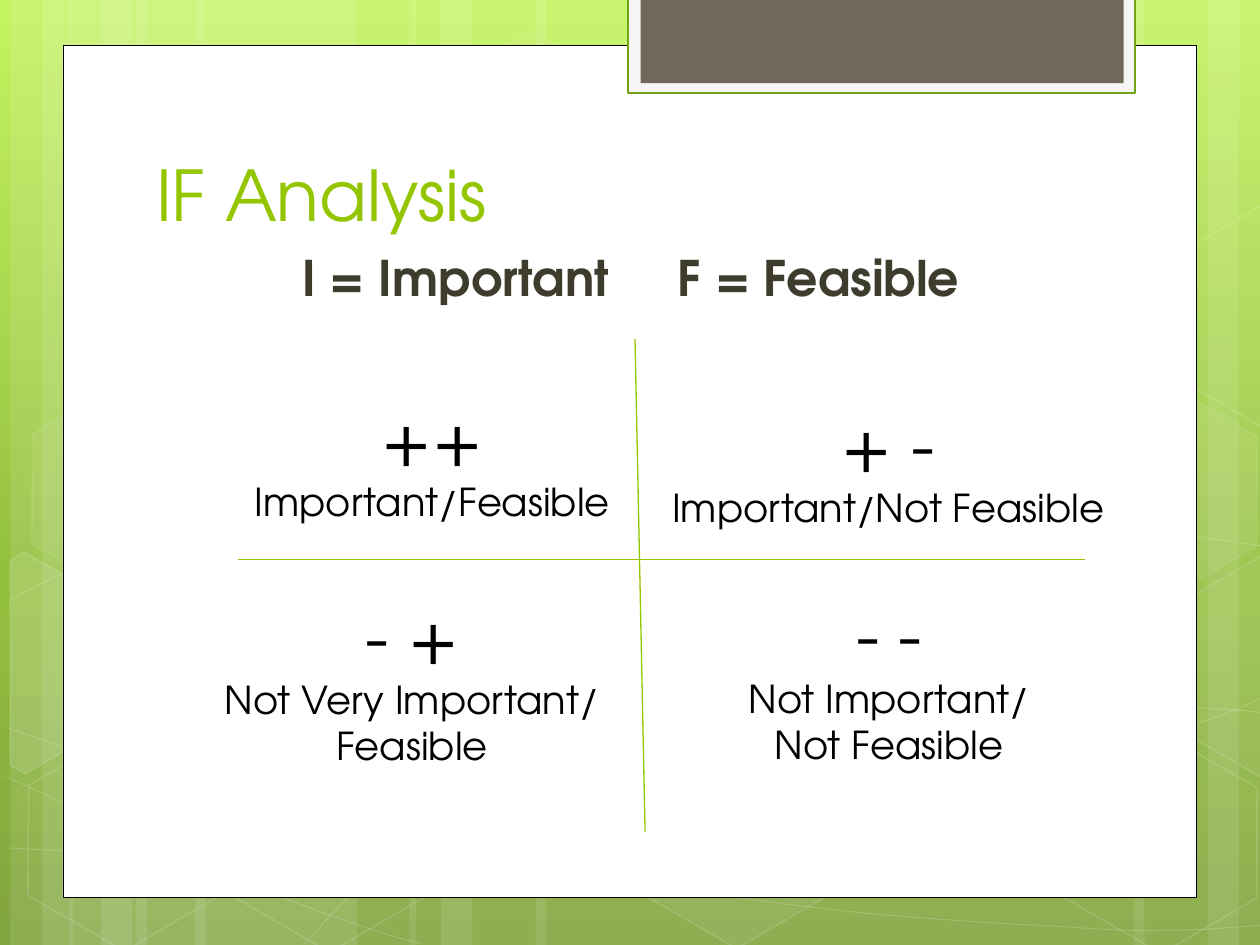
from copy import deepcopy
from math import cos, radians, sin
from lxml import etree
from pptx import Presentation
from pptx.dml.color import RGBColor
from pptx.enum.shapes import MSO_CONNECTOR, MSO_SHAPE
from pptx.enum.text import MSO_ANCHOR, MSO_AUTO_SIZE, PP_ALIGN
from pptx.oxml.ns import qn
from pptx.util import Inches, Pt

RECTANGLE, HEXAGON = MSO_SHAPE.RECTANGLE, MSO_SHAPE.HEXAGON
STRAIGHT = MSO_CONNECTOR.STRAIGHT
TOP, BOTTOM = MSO_ANCHOR.TOP, MSO_ANCHOR.BOTTOM
LEFT, CENTER = PP_ALIGN.LEFT, PP_ALIGN.CENTER
GROW, FIXED = MSO_AUTO_SIZE.SHAPE_TO_FIT_TEXT, MSO_AUTO_SIZE.NONE

COLORS = {
    "sky": "C3F35F", "leaf": "93BF3F", "moss": "81A53E", "white": "FFFFFF",
    "black": "000000", "tab": "F5F5F5", "tab_edge": "74A510", "taupe": "71685A",
    "lime": "94C600", "olive": "3E3D2D",
}
FONT = "TeX Gyre Adventor"
TITLE = {"name": FONT, "size": Pt(40), "color": "lime"}
HEADING = {"name": FONT, "size": Pt(28), "bold": True, "color": "olive"}
SIGN = {"name": FONT, "size": Pt(40), "color": "black"}
LABEL = {"name": FONT, "size": Pt(22), "color": "black"}
TILT = 30

presentation = Presentation()
presentation.slide_width, presentation.slide_height = Inches(10), Inches(7.5)
slide = presentation.slides.add_slide(presentation.slide_layouts[6])
shapes = slide.shapes
UNIT = presentation.slide_width // 100
ROWS = presentation.slide_height / UNIT


def paint(shape, fill=None, fill_alpha=100, line=None, width=1, line_alpha=100):
    shape.shadow.inherit = False
    shape.line.width = Pt(width)
    for target, color, alpha in ((shape.fill, fill, fill_alpha), (shape.line.fill, line, line_alpha)):
        if color is None:
            target.background()
            continue
        target.solid()
        target.fore_color.rgb = RGBColor.from_string(COLORS[color])
        if alpha < 100:
            holder = shape.element.spPr if target is shape.fill else shape.element.spPr.find(qn("a:ln"))
            color_node = holder.find(qn("a:solidFill"))[0]
            etree.SubElement(color_node, qn("a:alpha")).set("val", str(alpha * 1000))


def add_text(box, lines, align=CENTER, anchor=TOP, auto_size=GROW):
    frame = shapes.add_textbox(*(round(value * UNIT) for value in box)).text_frame
    frame.word_wrap, frame.auto_size, frame.vertical_anchor = True, auto_size, anchor
    for index, (text, formats) in enumerate(lines):
        paragraph = frame.add_paragraph() if index else frame.paragraphs[0]
        paragraph.alignment = align
        run = paragraph.add_run()
        run.text = text
        for attribute, value in formats.items():
            if attribute == "color":
                run.font.color.rgb = RGBColor.from_string(COLORS[value])
            else:
                setattr(run.font, attribute, value)
    return frame


background = slide.background.fill
background.gradient()
background.gradient_angle = 270
stop_list = slide.element.find(".//" + qn("a:gsLst"))
stop_list.insert(1, deepcopy(stop_list[0]))
for stop, color, position in zip(background.gradient_stops, ("sky", "leaf", "moss"), (0, 0.62, 1)):
    stop.color.rgb = RGBColor.from_string(COLORS[color])
    stop.position = position

STRIPES = [
    (10.83, 17.5), (0.83, 5), (3.33, 8.33), (15.5, 17.5), (5.5, 5), (8, 8.33),
    (73.33, 17.5), (95.83, 5), (90, 8.33), (42.5, 30.83), (32.5, 5), (35, 8.33),
]
for left, width in STRIPES:
    stripe = shapes.add_shape(RECTANGLE, *(round(value * UNIT) for value in (left, 0, width, ROWS)))
    stripe.rotation = 180 if left > 70 else 0
    paint(stripe, "white", 10)

CURVES = [
    [(0.7, 67.3), (6.1, 67.6), (11.5, 67.9), (19, 67.8), (26.5, 67.7), (35.8, 67.5), (45.8, 66.5),
     (55.8, 65.5), (70, 63.6), (79.2, 61.7), (88.3, 59.8), (97.7, 56.8), (100.7, 55.1)],
    [(0.7, 47.7), (3.6, 46.1), (6.5, 44.6), (12.1, 43.1), (17.8, 41.6), (25.9, 39.4), (34.7, 38.7),
     (43.6, 38), (54.4, 37.9), (65.4, 38.7), (76.4, 39.5), (94.7, 42.6), (100.7, 43.4)],
    [(0.6, 61.7), (12.7, 67.2), (24.7, 72.7), (33.4, 74.9)],
    [(0.7, 57.8), (3.8, 58.9), (7, 60), (12.8, 61.6), (18.6, 63.1), (27.3, 65.6), (35.7, 67.3),
     (44, 69), (54.5, 70.8), (62.8, 71.8), (71.1, 72.9), (80, 73.3), (85.3, 73.6),
     (90.5, 74), (91.9, 73.8), (94.5, 73.8), (97.1, 73.7), (98.9, 73.5), (100.7, 73.4)],
    [(24.2, 74.9), (26, 72.9), (27.8, 70.9), (30.2, 69.1), (32.6, 67.3), (36, 65.3), (38.8, 63.9),
     (41.6, 62.5), (43.3, 61.9), (47, 60.9), (50.6, 59.9), (57.3, 58.5), (60.8, 57.8),
     (64.4, 57.1), (64.9, 57.1), (68, 56.9), (71.1, 56.6), (76, 56.3), (79.4, 56.2),
     (82.9, 56.1), (88.6, 56.2), (88.6, 56.2), (90.8, 56.2), (93.1, 56.2), (95.3, 56.2),
     (97.1, 56.3), (98.8, 56.4), (99.7, 56.5), (100.6, 56.6), (100.3, 56.5), (100.6, 56.6)],
]
for curve in CURVES:
    points = [(x * UNIT, y * UNIT) for x, y in curve]
    builder = shapes.build_freeform(*points[0])
    builder.add_line_segments(points[1:], close=False)
    swoosh = builder.convert_to_shape()
    segments = swoosh.element.findall(".//" + qn("a:lnTo"))
    outline = segments[0].getparent()
    for first in range(0, len(segments), 3):
        bezier = etree.SubElement(outline, qn("a:cubicBezTo"))
        for segment in segments[first:first + 3]:
            bezier.append(segment[0])
            outline.remove(segment)
    paint(swoosh, line="white", width=0.5, line_alpha=20)

HEXAGONS = [
    (33.4, 3.6, 4, 8), (49.7, 58.9, 6, 12), (1.1, 59.1, 0, 12), (1.4, 31.2, 7, 8),
    (17.4, 59.2, 0, 12), (75.3, 45.3, 10, 12), (83.4, 59.3, 0, 12), (83.4, 31.4, 7, 8),
]
for left, top, fill_alpha, line_alpha in HEXAGONS:
    hexagon = shapes.add_shape(HEXAGON, *(round(value * UNIT) for value in (left, top, 17.5, 15.2)))
    hexagon.adjustments[0] = 0.285
    hexagon.rotation = TILT
    paint(hexagon, "white" if fill_alpha else None, fill_alpha, "white", 1, line_alpha)

CUT_HEXAGONS = [
    (10, (3.6, 53.5), [(0.8, 44.5), (1.9, 43.8), (9.6, 48.2), (9.5, 57), (2, 61.4), (0.8, 60.7)]),
    (4, (98.5, 52), [(92.6, 48.5), (100.1, 44.1), (100.9, 44.6), (100.9, 61.3), (100.2, 61.7), (92.6, 57.3)]),
    (0, (98.5, 24.1), [(92.6, 20.7), (100.1, 16.3), (101, 16.8), (100.9, 33.5), (100.2, 33.9), (92.6, 29.5)]),
]
cosine, sine = cos(radians(TILT)), sin(radians(TILT))
for fill_alpha, (center_x, center_y), corners in CUT_HEXAGONS:
    offsets = [(x - center_x, y - center_y) for x, y in corners]
    points = [((center_x + x * cosine + y * sine) * UNIT, (center_y + y * cosine - x * sine) * UNIT)
              for x, y in offsets]
    builder = shapes.build_freeform(*points[0])
    builder.add_line_segments(points[1:])
    cut_hexagon = builder.convert_to_shape()
    cut_hexagon.rotation = TILT
    paint(cut_hexagon, "white" if fill_alpha else None, fill_alpha, "white", 1, 12)

PANELS = [
    ((5, 3.6, 90, 67.63), "white", "black", 0.5),
    ((49.86, -0.2, 40.24, 7.6), "tab", "tab_edge", 1.25),
    ((50.84, -0.2, 38.34, 6.8), "taupe", None, 1),
]
for box, fill, line, width in PANELS:
    panel = shapes.add_shape(RECTANGLE, *(round(value * UNIT) for value in box))
    paint(panel, fill, line=line, width=width)

add_text((11.4, 11.25, 76.8, 7.9), [("IF Analysis", TITLE)], LEFT, BOTTOM, FIXED)
heading = add_text((11.4, 19.15, 82.8, 47.5), [("I = Important\tF = Feasible", HEADING)], LEFT, TOP, FIXED)
heading.margin_left = round(12.6 * UNIT)
tab_list = etree.SubElement(heading.paragraphs[0]._p.get_or_add_pPr(), qn("a:tabLst"))
tab_stop = etree.SubElement(tab_list, qn("a:tab"))
tab_stop.set("pos", str(round(29.8 * UNIT)))
tab_stop.set("algn", "l")

for axis in ((50.4, 26.9, 51.2, 66), (18.9, 44.4, 86.1, 44.4)):
    connector = shapes.add_connector(STRAIGHT, *(round(value * UNIT) for value in axis))
    connector.line.color.rgb = RGBColor.from_string(COLORS["lime"])
    connector.line.width = Pt(0.75)
    etree.SubElement(connector.element.spPr, qn("a:effectLst"))

QUADRANTS = [
    ((18.9, 30.8, 30.8, 11.4), "++", ["Important/Feasible"]),
    ((15.6, 46.5, 34.2, 15.1), "- +", ["Not Very Important/", "Feasible"]),
    ((51.2, 31.3, 38.6, 11.4), "+ -", ["Important/Not Feasible"]),
    ((54.2, 46.4, 32.7, 15.1), "- -", ["Not Important/", "Not Feasible"]),
]
for box, sign, labels in QUADRANTS:
    add_text(box, [(sign, SIGN)] + [(label, LABEL) for label in labels])

presentation.save("out.pptx")
